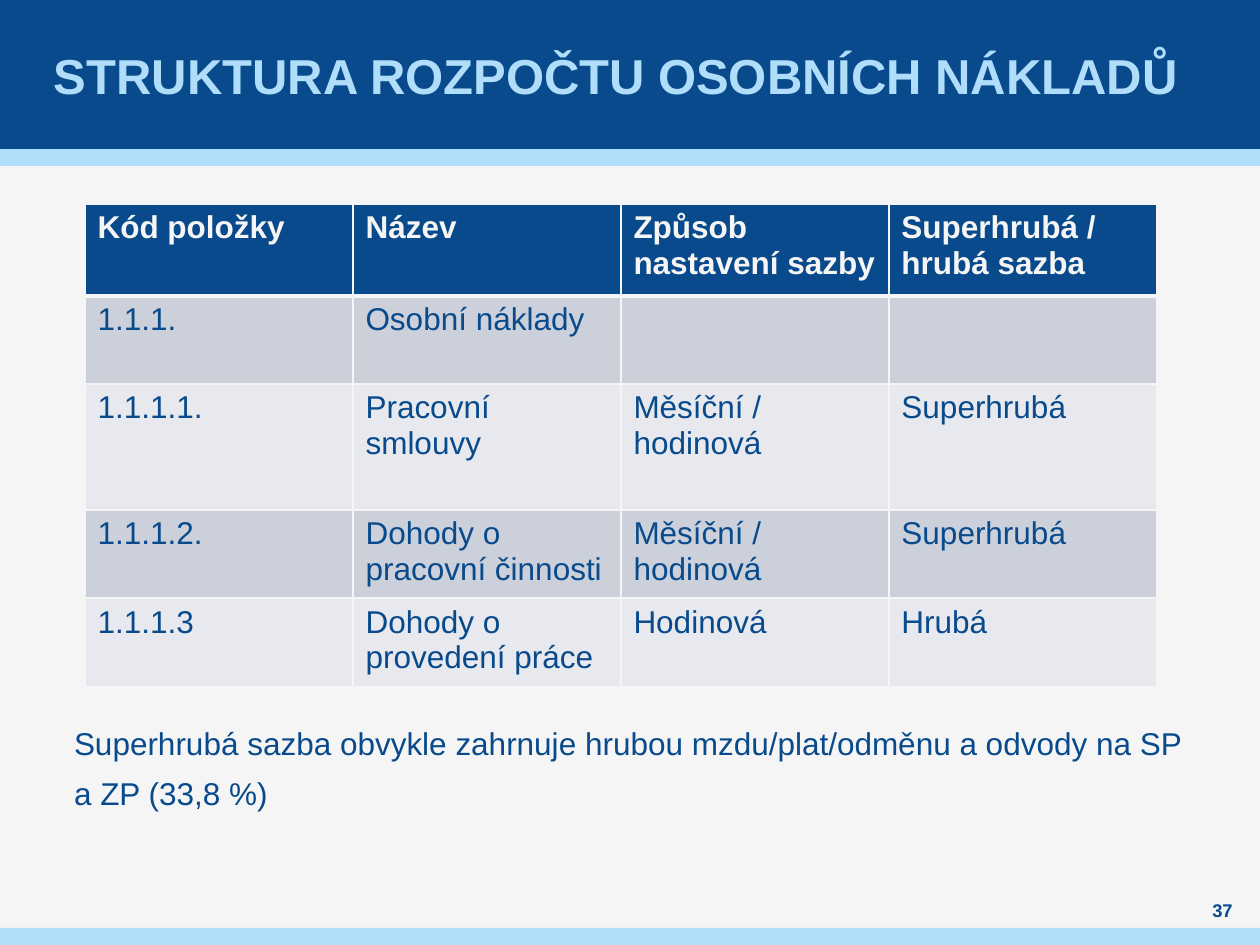
"""Build the slide on the structure of a personnel cost budget."""
from lxml.etree import SubElement
from pptx import Presentation
from pptx.dml.color import RGBColor
from pptx.enum.shapes import MSO_SHAPE as Preset
from pptx.enum.text import MSO_ANCHOR as Anchor, PP_ALIGN as Align
from pptx.oxml.ns import qn
from pptx.util import Emu, Pt

PX = 914400 / 126
COLORS = {
    "paper": "F5F5F5", "navy": "084A8B", "sky": "AFDDFA",
    "odd": "CCD0DA", "even": "E7E9EE",
}
BANDS = [
    ((0, 149, 1260, 17), "sky"),
    ((0, 0, 1260, 149), "navy"),
    ((0, 928, 1260, 17), "sky"),
]
TEXTS = [
    {"text": "STRUKTURA ROZPOČTU OSOBNÍCH NÁKLADŮ", "box": (49, 0, 1161, 149),
     "inset": 5, "anchor": Anchor.MIDDLE, "size": 28, "color": "sky", "bold": True,
     "paragraph": {}},
    {"text": "Superhrubá sazba obvykle zahrnuje hrubou mzdu/plat/odměnu "
             "a odvody na SP a ZP (33,8 %)",
     "box": (74, 711, 1112, 132), "inset": 0, "anchor": Anchor.TOP,
     "size": 18, "color": "navy", "bold": False,
     "paragraph": {"line_spacing": Pt(28.8), "space_before": Pt(6), "space_after": Pt(6)}},
    {"text": "37", "box": (1190, 898, 65, 25), "inset": 0, "anchor": Anchor.MIDDLE,
     "size": 10.5, "color": "navy", "bold": True,
     "paragraph": {"alignment": Align.CENTER}},
]
BUDGET = [
    ("Kód položky", "Název", "Způsob nastavení sazby", "Superhrubá / hrubá sazba"),
    ("1.1.1.", "Osobní náklady", "", ""),
    ("1.1.1.1.", "Pracovní smlouvy", "Měsíční / hodinová", "Superhrubá"),
    ("1.1.1.2.", "Dohody o pracovní činnosti", "Měsíční / hodinová", "Superhrubá"),
    ("1.1.1.3", "Dohody o provedení práce", "Hodinová", "Hrubá"),
]
BUDGET_LEFT, BUDGET_TOP, COLUMN_WIDTH = 85, 204, 268
ROW_HEIGHTS = [92, 88, 126, 88, 88]


def px(length):
    return Emu(round(length * PX))


def rgb(name):
    return RGBColor.from_string(COLORS[name])


def paint(part, color):
    part.fill.solid()
    part.fill.fore_color.rgb = rgb(color)


def style_font(font, size, color, bold):
    for key, value in {"name": "Arial", "size": Pt(size), "bold": bold}.items():
        setattr(font, key, value)
    font.color.rgb = rgb(color)


def add_band(slide, box, color):
    band = slide.shapes.add_shape(Preset.RECTANGLE, *map(px, box))
    band.shadow.inherit = False
    band.line.fill.background()
    paint(band, color)


def add_text(slide, item):
    frame = slide.shapes.add_textbox(*map(px, item["box"])).text_frame
    layout = {
        "word_wrap": True, "vertical_anchor": item["anchor"],
        "margin_left": px(item["inset"]), "margin_right": px(item["inset"]),
        "margin_top": 0, "margin_bottom": 0,
    }
    for key, value in layout.items():
        setattr(frame, key, value)
    paragraph = frame.paragraphs[0]
    for key, value in item["paragraph"].items():
        setattr(paragraph, key, value)
    run = paragraph.add_run()
    run.text = item["text"]
    style_font(run.font, item["size"], item["color"], item["bold"])


def set_borders(cell, widths):
    properties = cell._tc.get_or_add_tcPr()
    for position, (side, width) in enumerate(widths.items()):
        border = SubElement(properties, qn(f"a:ln{side}"), w=str(Pt(width)))
        fill = SubElement(border, qn("a:solidFill"))
        SubElement(fill, qn("a:srgbClr"), val=COLORS["paper"])
        properties.insert(position, border)


def add_budget(slide):
    columns = len(BUDGET[0])
    size = (COLUMN_WIDTH * columns, sum(ROW_HEIGHTS))
    table = slide.shapes.add_table(
        len(BUDGET), columns, *map(px, (BUDGET_LEFT, BUDGET_TOP, *size))).table
    for column in table.columns:
        column.width = px(COLUMN_WIDTH)
    for index, (entries, height) in enumerate(zip(BUDGET, ROW_HEIGHTS)):
        header = index == 0
        table.rows[index].height = px(height)
        fill = "navy" if header else ("even", "odd")[index % 2]
        widths = {"L": 1, "R": 1, "T": 3 if index == 1 else 1, "B": 3 if header else 1}
        for cell, entry in zip(table.rows[index].cells, entries):
            cell.text = entry
            style_font(cell.text_frame.paragraphs[0].font, 18,
                       "paper" if header else "navy", header)
            for run in cell.text_frame.paragraphs[0].runs:
                style_font(run.font, 18, "paper" if header else "navy", header)
            paint(cell, fill)
            set_borders(cell, widths)


def main():
    deck = Presentation()
    deck.slide_width, deck.slide_height = px(1260), px(945)
    slide = deck.slides.add_slide(deck.slide_layouts[6])
    paint(slide.background, "paper")
    for box, color in BANDS:
        add_band(slide, box, color)
    for item in TEXTS:
        add_text(slide, item)
    add_budget(slide)
    deck.save("out.pptx")


if __name__ == "__main__":
    main()
